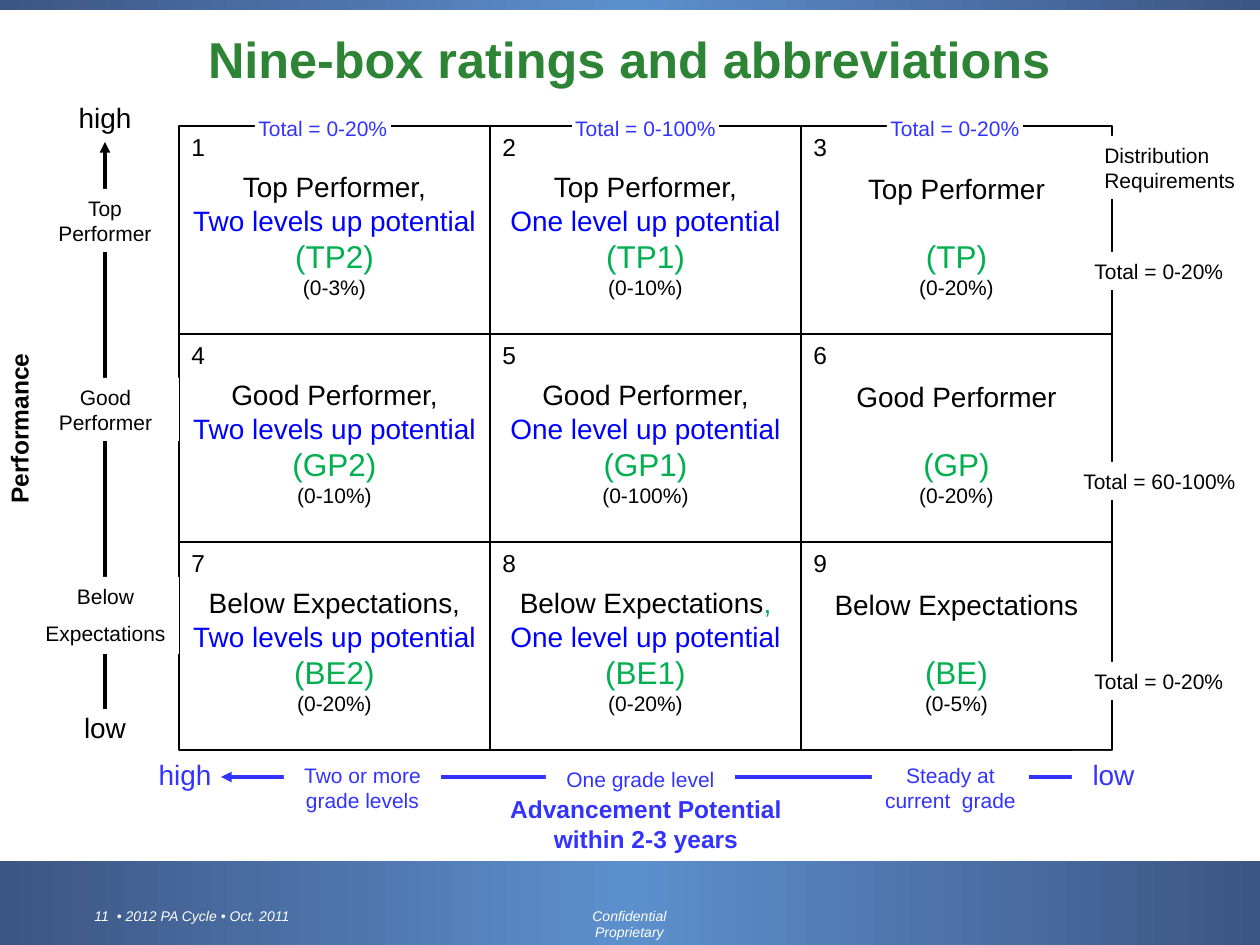
from copy import deepcopy
from dataclasses import dataclass

from lxml.etree import SubElement
from pptx import Presentation
from pptx.dml.color import RGBColor
from pptx.enum.shapes import MSO_CONNECTOR as Connector, MSO_SHAPE as Preset
from pptx.enum.text import MSO_ANCHOR as Anchor, PP_ALIGN as Align
from pptx.oxml.ns import qn
from pptx.util import Emu, Pt


@dataclass(frozen=True)
class Theme:
    font: str = "Arial"
    black: str = "000000"
    white: str = "FFFFFF"
    title: str = "2D8435"
    axis: str = "3333FF"
    potential: str = "0000FF"
    code: str = "00B050"
    band_edge: str = "3D5584"
    band_middle: str = "5C90CC"
    title_size: float = 28.8
    code_size: int = 18
    large: int = 16
    medium: int = 14
    small: int = 12
    tiny: int = 8


THEME = Theme()
EMU_PER_PX = 914400 / 126
SLIDE_WIDTH, SLIDE_HEIGHT = 1260, 945

# Grid of ratings: performance, potential, abbreviation, share
GRID_LEFT, GRID_TOP, CELL_WIDTH, CELL_HEIGHT = 179, 126, 311, 208
CELL_BOTTOM_INSET = 34
TWO_UP, ONE_UP = "Two levels up potential", "One level up potential"
RATINGS = [
    [("Top Performer", TWO_UP, "(TP2)", "(0-3%)"),
     ("Top Performer", ONE_UP, "(TP1)", "(0-10%)"),
     ("Top Performer", None, "(TP)", "(0-20%)")],
    [("Good Performer", TWO_UP, "(GP2)", "(0-10%)"),
     ("Good Performer", ONE_UP, "(GP1)", "(0-100%)"),
     ("Good Performer", None, "(GP)", "(0-20%)")],
    [("Below Expectations", TWO_UP, "(BE2)", "(0-20%)"),
     ("Below Expectations", ONE_UP, "(BE1)", "(0-20%)"),
     ("Below Expectations", None, "(BE)", "(0-5%)")],
]
COMMA_COLORS = {8: THEME.code}

BANDS = [(0, 861, 1260, 84), (0, 0, 1260, 10)]
AXES = [((1102, 777), (221, 777), THEME.axis),
        ((105, 709), (105, 142), THEME.black)]
AXIS_ENDS = [
    ((136, 751, 98, 47), "high", THEME.axis),
    ((1072, 751, 83, 47), "low", THEME.axis),
    ((63, 94, 84, 47), "high", THEME.black),
    ((63, 704, 84, 47), "low", THEME.black),
]
PERFORMANCE_LEVELS = [
    ((37, 189, 136, 63), ["Top Performer"]),
    ((32, 378, 147, 63), ["Good Performer"]),
    ((32, 577, 147, 77), ["Below", "Expectations"]),
]
POTENTIAL_LEVELS = [
    ((284, 756, 157, 63), "Two or more grade levels"),
    ((546, 760, 189, 38), "One grade level"),
    ((872, 756, 157, 63), "Steady at current  grade"),
]
COLUMN_TOTALS = [
    ((255, 116, 136, 25), "Total = 0-20%"),
    ((572, 116, 147, 25), "Total = 0-100%"),
    ((887, 116, 136, 25), "Total = 0-20%"),
]
ROW_TOTALS = [
    ((1092, 136, 158, 63), ["Distribution", "Requirements"]),
    ((1082, 252, 155, 38), ["Total = 0-20%"]),
    ((1071, 462, 179, 38), ["Total = 60-100%"]),
    ((1082, 662, 155, 38), ["Total = 0-20%"]),
]


def px(length):
    return Emu(round(length * EMU_PER_PX))


def rgb(color):
    return RGBColor.from_string(color)


def style(font, size, color, bold=False, italic=False):
    font.name, font.size = THEME.font, Pt(size)
    font.bold, font.italic = bold, italic
    font.color.rgb = rgb(color)


def add_box(slide, rect, fill=None, outline=None):
    shape = slide.shapes.add_shape(Preset.RECTANGLE, *map(px, rect))
    shape.shadow.inherit = False
    if fill:
        shape.fill.solid()
        shape.fill.fore_color.rgb = rgb(fill)
    else:
        shape.fill.background()
    if outline:
        shape.line.color.rgb = rgb(outline)
        shape.line.width = Pt(1)
    else:
        shape.line.fill.background()
    return shape


def add_text(slide, rect, lines, size, color, fill=None, align=Align.CENTER,
             anchor=Anchor.TOP, wrap=True, inset=None, gap=0,
             bold=False, italic=False):
    """Add uniformly styled lines, on a filled box when fill is given."""
    if fill:
        shape = add_box(slide, rect, fill)
    else:
        shape = slide.shapes.add_textbox(*map(px, rect))
    frame = shape.text_frame
    frame.word_wrap, frame.vertical_anchor = wrap, anchor
    if inset is not None:
        frame.margin_left = frame.margin_right = px(inset)
        frame.margin_top = frame.margin_bottom = px(inset)
    frame.text = "\n".join(lines)
    for index, paragraph in enumerate(frame.paragraphs):
        paragraph.alignment = align
        if index and gap:
            paragraph.space_before = Pt(gap)
        style(paragraph.font, size, color, bold, italic)
    return shape


def add_band(slide, rect):
    """Add a bar that is lightest in its middle."""
    fill = add_box(slide, rect).fill
    fill.gradient()
    fill.gradient_angle = 0
    first = fill.gradient_stops[0]
    first.color.rgb = rgb(THEME.band_edge)
    stops = fill.gradient_stops
    stops[1].color.rgb = rgb(THEME.band_edge)
    stops[0].position, stops[1].position = 0, 1
    stop_list = slide.shapes[-1]._element.spPr.find(qn("a:gradFill")).find(qn("a:gsLst"))
    stop_list.insert(1, deepcopy(stop_list[0]))
    middle = fill.gradient_stops[1]
    middle.position = 0.5
    middle.color.rgb = rgb(THEME.band_middle)


def add_axis(slide, start, end, color):
    line = slide.shapes.add_connector(Connector.STRAIGHT, *map(px, start + end))
    line.line.color.rgb = rgb(color)
    line.line.width = Pt(2)
    SubElement(line.line._get_or_add_ln(), qn("a:tailEnd"), type="triangle")
    SubElement(line._element.spPr, qn("a:effectLst"))


def add_rating(slide, number, rect, rating):
    performance, potential, code, share = rating
    frame = add_box(slide, rect, outline=THEME.black).text_frame
    frame.word_wrap, frame.vertical_anchor = False, Anchor.BOTTOM
    frame.margin_bottom = px(CELL_BOTTOM_INSET)
    lines = [(performance, THEME.large, THEME.black),
             (potential, THEME.large, THEME.potential),
             (code, THEME.code_size, THEME.code),
             (share, THEME.small, THEME.black)]
    paragraph = None
    for text, size, color in filter(lambda line: line[0], lines):
        paragraph = frame.add_paragraph() if paragraph else frame.paragraphs[0]
        paragraph.alignment = Align.CENTER
        style(paragraph.font, size, color)
        paragraph.add_run().text = text
        if text == performance and potential:
            comma = paragraph.add_run()
            comma.text = ","
            comma.font.color.rgb = rgb(COMMA_COLORS.get(number, color))
        if text == code and not potential:
            paragraph.space_before = Pt(18.4)
    add_text(slide, (*rect[:2], 52, 39), [str(number)], THEME.medium,
             THEME.black, align=Align.LEFT)


def main():
    presentation = Presentation()
    presentation.slide_width, presentation.slide_height = px(SLIDE_WIDTH), px(SLIDE_HEIGHT)
    slide = presentation.slides.add_slide(presentation.slide_layouts[6])

    for rect in BANDS:
        add_band(slide, rect)
    add_text(slide, (82, 901, 335, 29), ["11  • 2012 PA Cycle • Oct. 2011"],
             THEME.tiny, THEME.white, align=Align.LEFT, italic=True)
    add_text(slide, (544, 901, 171, 46), ["Confidential", "Proprietary"],
             THEME.tiny, THEME.white, wrap=False, italic=True)
    add_text(slide, (10, 32, 1239, 53), ["Nine-box ratings and abbreviations"],
             THEME.title_size, THEME.title, anchor=Anchor.MIDDLE, bold=True)

    for axis in AXES:
        add_axis(slide, *axis)
    for row, ratings in enumerate(RATINGS):
        for column, rating in enumerate(ratings):
            rect = (GRID_LEFT + column * CELL_WIDTH, GRID_TOP + row * CELL_HEIGHT,
                    CELL_WIDTH, CELL_HEIGHT)
            add_rating(slide, row * len(ratings) + column + 1, rect, rating)

    add_text(slide, (-94, 407, 227, 43), ["Performance"], THEME.medium,
             THEME.black, bold=True).rotation = 270
    add_text(slide, (472, 788, 348, 72), ["Advancement Potential within 2-3 years"],
             THEME.medium, THEME.axis, bold=True)
    for rect, text, color in AXIS_ENDS:
        fill = THEME.white if text == "low" and color == THEME.axis else None
        add_text(slide, rect, [text], THEME.large, color, fill)
    for rect, lines in PERFORMANCE_LEVELS:
        add_text(slide, rect, lines, THEME.small, THEME.black, THEME.white, gap=7)
    for rect, text in POTENTIAL_LEVELS:
        add_text(slide, rect, [text], THEME.small, THEME.axis, THEME.white,
                 anchor=Anchor.MIDDLE)
    for rect, text in COLUMN_TOTALS:
        add_text(slide, rect, [text], THEME.small, THEME.axis, THEME.white,
                 anchor=Anchor.MIDDLE, wrap=False, inset=0)
    for rect, lines in ROW_TOTALS:
        add_text(slide, rect, lines, THEME.small, THEME.black, THEME.white,
                 align=Align.LEFT, wrap=False)

    presentation.save("out.pptx")


if __name__ == "__main__":
    main()
